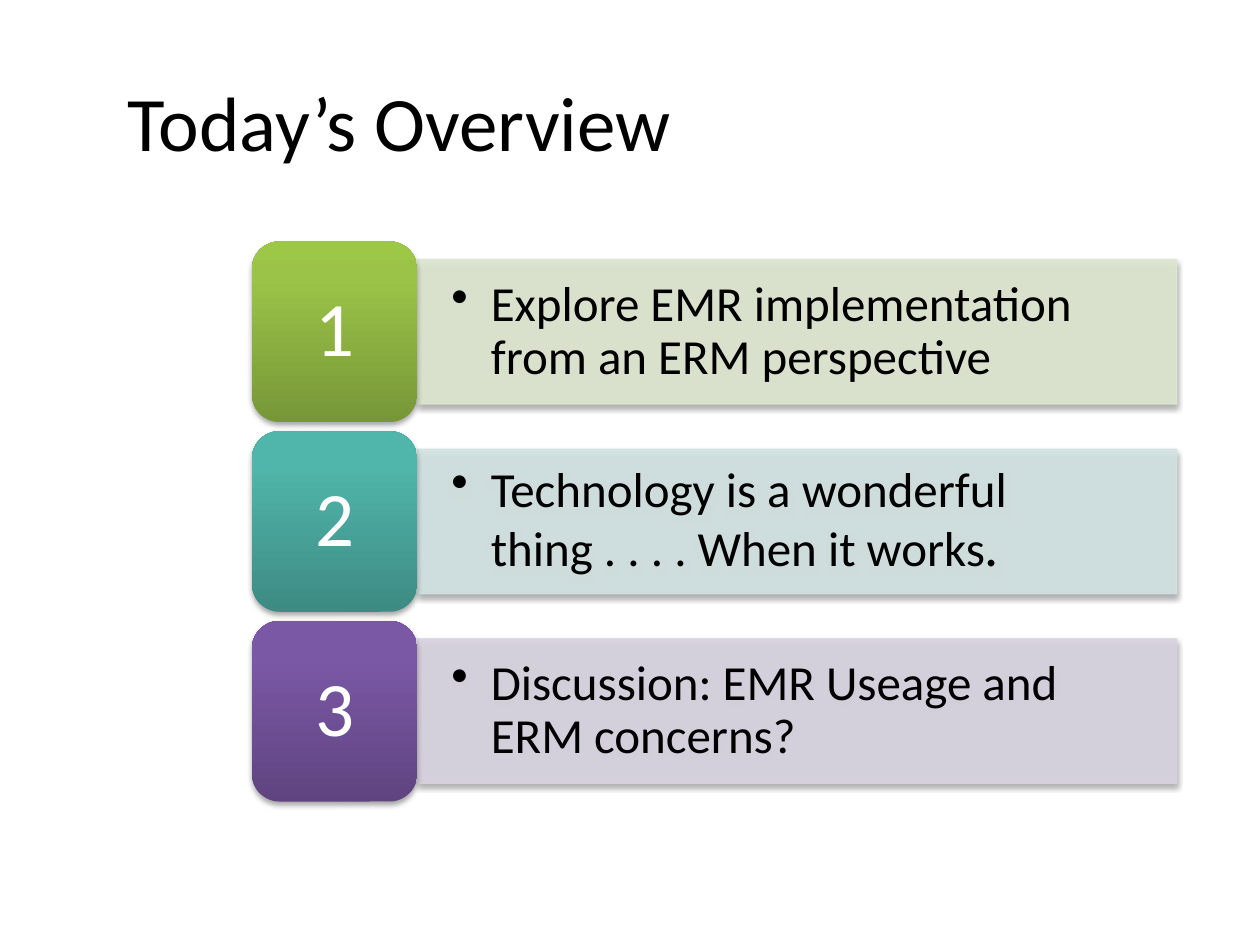
"""Build the overview slide with three numbered topics."""
from copy import deepcopy
from dataclasses import dataclass

from pptx import Presentation
from pptx.dml.color import RGBColor
from pptx.enum.shapes import MSO_SHAPE
from pptx.enum.text import MSO_ANCHOR, PP_ALIGN
from pptx.oxml import parse_xml
from pptx.oxml.ns import nsdecls, qn
from pptx.util import Pt

RECT = MSO_SHAPE.RECTANGLE
ROUND = MSO_SHAPE.ROUNDED_RECTANGLE
MIDDLE = MSO_ANCHOR.MIDDLE
LEFT, CENTER = PP_ALIGN.LEFT, PP_ALIGN.CENTER


@dataclass(frozen=True)
class Theme:
    font: str = "Calibri"
    dark: str = "000000"
    light: str = "FFFFFF"
    head: int = 44
    body: int = 28
    stop: int = 32
    bars: tuple = ("DEE7D1", "D2E3E2", "D8D3E0")
    tiles: tuple = (
        ("779737", "9BC348", "9DC746"),
        ("3D8B83", "50B5AA", "4EB8AC"),
        ("5F4480", "7B58A6", "7C57A8"),
    )


class Deck:
    def __init__(self, theme):
        self.theme = theme
        self.prs = Presentation()
        self.prs.slide_width, self.prs.slide_height = Pt(720), Pt(540)
        self.slide = self.prs.slides.add_slide(self.prs.slide_layouts[6])

    def label(self, shape, runs, color, align, inset):
        frame = shape.text_frame
        frame.word_wrap = True
        frame.vertical_anchor = MIDDLE
        frame.margin_left = frame.margin_right = Pt(inset)
        frame.margin_top = frame.margin_bottom = Pt(inset / 2)
        para = frame.paragraphs[0]
        para.alignment = align
        for text, size in runs:
            run = para.add_run()
            run.text = text
            run.font.name = self.theme.font
            run.font.size = Pt(size)
            run.font.color.rgb = RGBColor.from_string(color)
        return para

    def shade(self, shape):
        shape.shadow.inherit = False
        shape._element.spPr.find(qn("a:effectLst")).append(parse_xml(
            f'<a:outerShdw {nsdecls("a")} blurRad="40000" dist="23000" dir="5400000" '
            'rotWithShape="0"><a:srgbClr val="000000"><a:alpha val="35000"/>'
            '</a:srgbClr></a:outerShdw>'))

    def title(self, text, x, y, w, h):
        box = self.slide.shapes.add_textbox(Pt(x), Pt(y), Pt(w), Pt(h))
        self.label(box, [(text, self.theme.head)], self.theme.dark, LEFT, 7.2)

    def bar(self, runs, color, x, y, w, h):
        shape = self.slide.shapes.add_shape(RECT, Pt(x), Pt(y), Pt(w), Pt(h))
        rgb = RGBColor.from_string(color)
        shape.fill.solid()
        shape.fill.fore_color.rgb = rgb
        shape.line.color.rgb = rgb
        shape.line.width = Pt(0.75)
        for node in shape._element.spPr.iter(qn("a:srgbClr")):
            node.append(parse_xml(f'<a:alpha {nsdecls("a")} val="90000"/>'))
        self.shade(shape)
        para = self.label(shape, runs, self.theme.dark, LEFT, 19.6)
        para.line_spacing = 0.9
        props = para._p.get_or_add_pPr()
        props.set("marL", str(Pt(22.5)))
        props.set("indent", str(-Pt(22.5)))
        props.append(parse_xml(f'<a:buChar {nsdecls("a")} char="•"/>'))

    def tile(self, text, colors, x, y, w, h):
        shape = self.slide.shapes.add_shape(ROUND, Pt(x), Pt(y), Pt(w), Pt(h))
        fill = shape.fill
        fill.gradient()
        fill.gradient_angle = 90
        stops = shape._element.spPr.find(qn("a:gradFill")).find(qn("a:gsLst"))
        stops.append(deepcopy(stops[0]))
        for stop, place, color in zip(fill.gradient_stops, (0, 0.8, 1), colors):
            stop.position = place
            stop.color.rgb = RGBColor.from_string(color)
        shape.line.fill.background()
        self.shade(shape)
        para = self.label(shape, [(text, self.theme.head)], self.theme.light, CENTER, 13)
        para.line_spacing = 0.9


def main():
    theme = Theme()
    deck = Deck(theme)
    topics = (
        [("Explore EMR implementation from an ERM perspective", theme.body)],
        [("Technology is a wonderful thing . . . . When it works", theme.body),
         (".", theme.stop)],
        [("Discussion: EMR Useage and ERM concerns?", theme.body)],
    )
    left, top, pitch = 144, 138, 108.4
    wide, high = 94.4, 103.2
    thick = high * 0.8
    for i, runs in enumerate(topics):
        y = top + i * pitch
        deck.bar(runs, theme.bars[i], left + wide, y + (high - thick) / 2, 434, thick)
        deck.tile(str(i + 1), theme.tiles[i], left, y, wide, high)
    deck.title("Today’s Overview", 66, 24, 636, 90)
    deck.prs.save("out.pptx")


if __name__ == "__main__":
    main()
